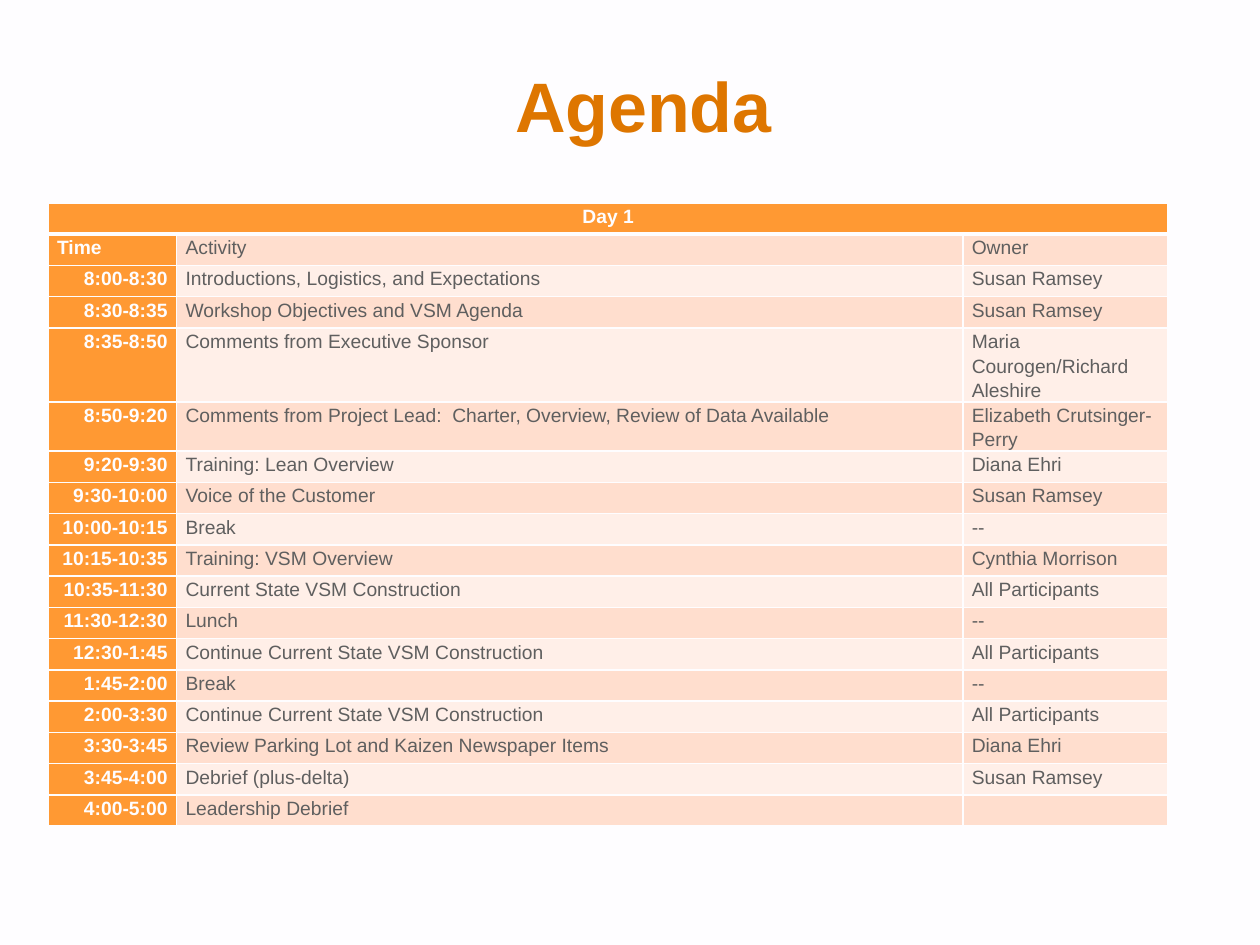
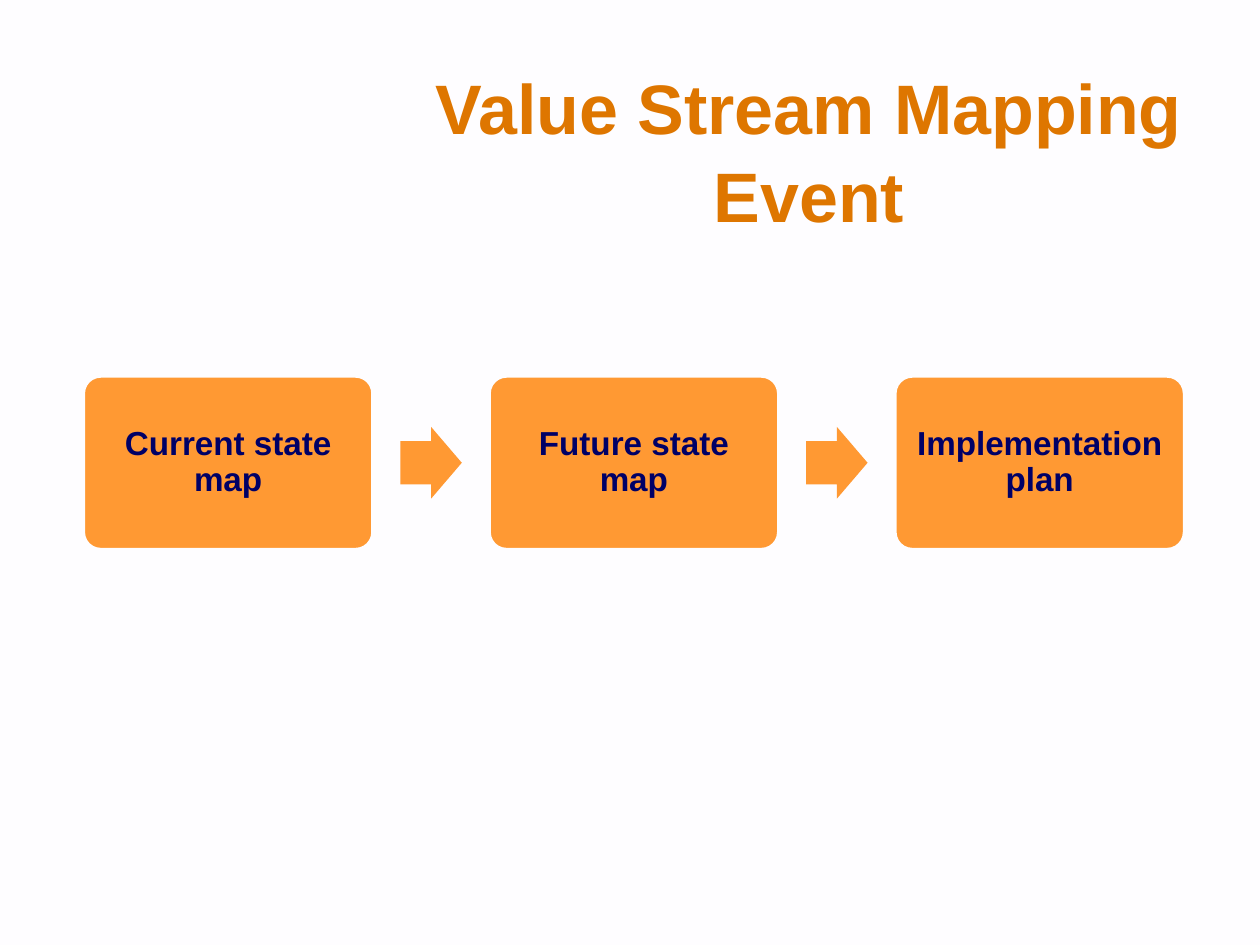
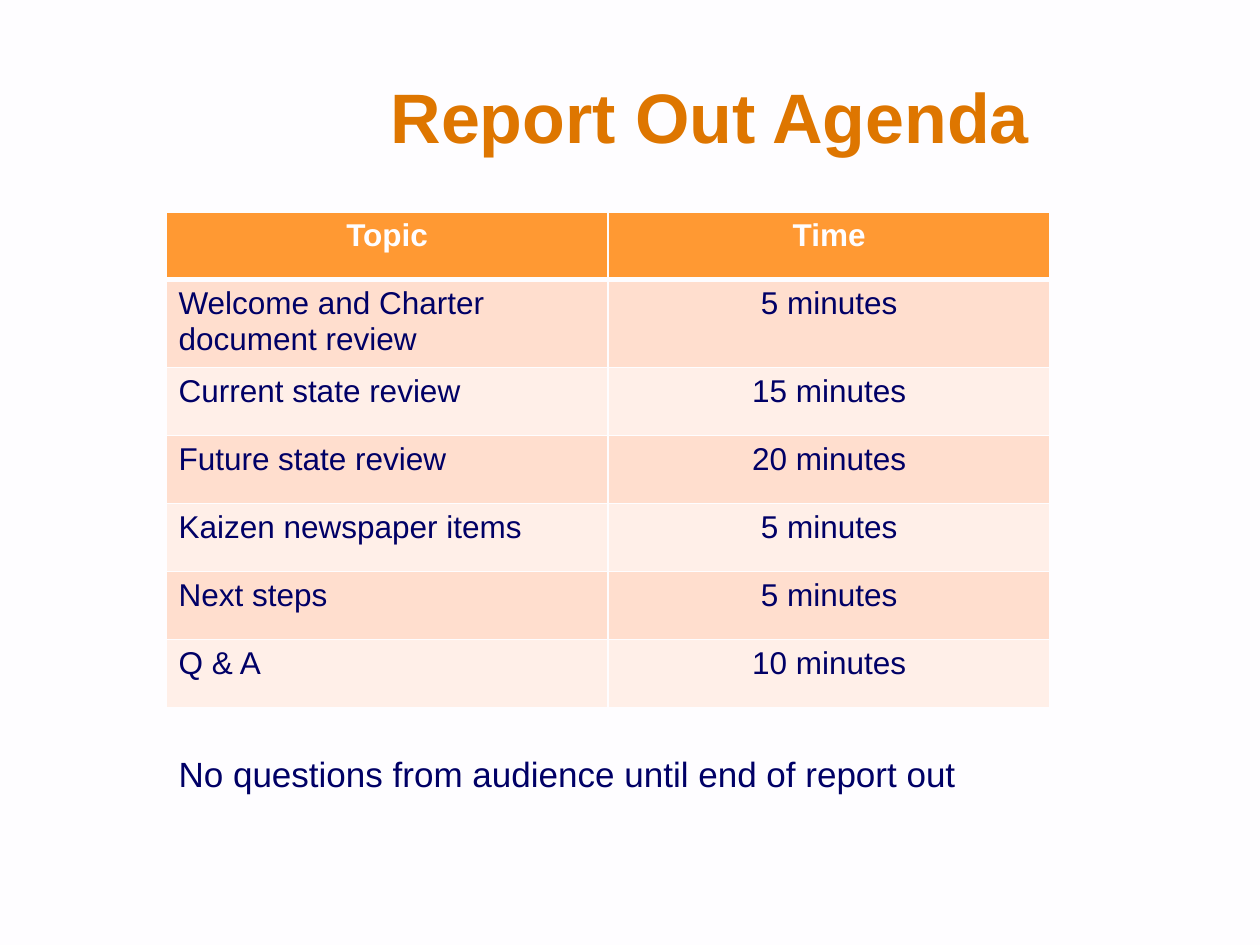
from lxml import etree
from pptx import Presentation
from pptx.dml.color import RGBColor
from pptx.enum.shapes import MSO_SHAPE
from pptx.enum.text import MSO_ANCHOR, MSO_AUTO_SIZE, PP_ALIGN
from pptx.oxml.ns import qn
from pptx.util import Cm, Pt

WHITE = RGBColor(0xFE, 0xFD, 0xFF)
RUST = RGBColor(0xDE, 0x76, 0x00)
ORANGE = RGBColor(0xFF, 0x99, 0x33)
PEACH = RGBColor(0xFF, 0xDE, 0xCE)
PALE = RGBColor(0xFF, 0xEF, 0xE8)
GREY = RGBColor(0x5F, 0x5F, 0x5F)
NAVY = RGBColor(0x00, 0x00, 0x66)
FONT = "Arial"
LEFT, MID, RIGHT = PP_ALIGN.LEFT, PP_ALIGN.CENTER, PP_ALIGN.RIGHT
MIDDLE, BOTTOM = MSO_ANCHOR.MIDDLE, MSO_ANCHOR.BOTTOM
FIXED = MSO_AUTO_SIZE.NONE
ROUND, ARROW = MSO_SHAPE.ROUNDED_RECTANGLE, MSO_SHAPE.RIGHT_ARROW
TITLE_ONLY = 5

DAY = [
    ("Day 1", "", ""),
    ("Time", "Activity", "Owner"),
    ("8:00-8:30", "Introductions, Logistics, and Expectations", "Susan Ramsey"),
    ("8:30-8:35", "Workshop Objectives and VSM Agenda", "Susan Ramsey"),
    ("8:35-8:50", "Comments from Executive Sponsor", "Maria Courogen/Richard Aleshire"),
    ("8:50-9:20", "Comments from Project Lead:  Charter, Overview, Review of Data Available",
     "Elizabeth Crutsinger-Perry"),
    ("9:20-9:30", "Training: Lean Overview", "Diana Ehri"),
    ("9:30-10:00", "Voice of the Customer", "Susan Ramsey"),
    ("10:00-10:15", "Break", "--"),
    ("10:15-10:35", "Training: VSM Overview", "Cynthia Morrison"),
    ("10:35-11:30", "Current State VSM Construction", "All Participants"),
    ("11:30-12:30", "Lunch", "--"),
    ("12:30-1:45", "Continue Current State VSM Construction", "All Participants"),
    ("1:45-2:00", "Break", "--"),
    ("2:00-3:30", "Continue Current State VSM Construction", "All Participants"),
    ("3:30-3:45", "Review Parking Lot and Kaizen Newspaper Items", "Diana Ehri"),
    ("3:45-4:00", "Debrief (plus-delta)", "Susan Ramsey"),
    ("4:00-5:00", "Leadership Debrief", ""),
]
REPORT = [
    ("Topic", "Time"),
    ("Welcome and Charter document review", "5 minutes"),
    ("Current state review", "15 minutes"),
    ("Future state review", "20 minutes"),
    ("Kaizen newspaper items", "5 minutes"),
    ("Next steps", "5 minutes"),
    ("Q & A", "10 minutes"),
]
STEPS = ["Current state map", "Future state map", "Implementation plan"]


def write(frame, text, size, color, bold=False, align=LEFT, space=1.0):
    """Write one styled run into the first paragraph of a frame."""
    para = frame.paragraphs[0]
    para.alignment = align
    para.line_spacing = space
    if not text:
        etree.SubElement(para._p, qn("a:endParaRPr"), sz=str(size * 100))
        return
    run = para.add_run()
    run.text = text
    font = run.font
    font.name, font.size, font.bold = FONT, Pt(size), bold
    font.color.rgb = color


def add_page(deck, text, box, anchor=BOTTOM, align=MID):
    """Add a slide with its title placed in the given box."""
    page = deck.slides.add_slide(deck.slide_layouts[TITLE_ONLY])
    title = page.shapes.title
    title.left, title.top, title.width, title.height = map(Cm, box)
    frame = title.text_frame
    frame.auto_size = FIXED
    frame.word_wrap = True
    frame.vertical_anchor = anchor
    write(frame, text, 40, RUST, True, align, 1.05)
    return page


def edge(cell, head):
    """Draw the cell borders, with a thick bottom under a header."""
    props = cell._tc.get_or_add_tcPr()
    for spot, side in enumerate(("L", "R", "T", "B")):
        width = Pt(3 if head and side == "B" else 1)
        line = etree.Element(qn(f"a:ln{side}"), w=str(width))
        fill = etree.SubElement(line, qn("a:solidFill"))
        etree.SubElement(fill, qn("a:srgbClr"), val=str(WHITE))
        props.insert(spot, line)


def add_grid(page, rows, left, top, cols, highs, inset, style):
    """Add a table whose style gives size, colour, bold, alignment and spacing."""
    frame = page.shapes.add_table(len(rows), len(cols), Cm(left), Cm(top),
                                  Cm(sum(cols)), Cm(sum(highs)))
    table = frame.table
    for col, wide in zip(table.columns, cols):
        col.width = Cm(wide)
    for i, (row, high) in enumerate(zip(rows, highs)):
        table.rows[i].height = Cm(high)
        for j, text in enumerate(row):
            cell = table.cell(i, j)
            size, color, bold, align, space = style(i, j)
            cell.margin_left = cell.margin_right = Cm(inset[0])
            cell.margin_top = cell.margin_bottom = Cm(inset[1])
            cell.fill.solid()
            band = PEACH if i % 2 else PALE
            cell.fill.fore_color.rgb = ORANGE if color == WHITE else band
            edge(cell, i == 0)
            write(cell.text_frame, text, size, color, bold, align, space)
    return table


def day_style(i, j):
    """Style a cell of the day plan."""
    strong = i == 0 or j == 0
    align = MID if i == 0 else RIGHT if j == 0 and i > 1 else LEFT
    return 11, WHITE if strong else GREY, strong, align, 1.15


def report_style(i, j):
    """Style a cell of the report plan."""
    head = i == 0
    return 18, WHITE if head else NAVY, head, MID if head or j else LEFT, 1.0


def add_block(page, kind, box, ratios):
    """Add an orange preset shape without shadow or line."""
    shape = page.shapes.add_shape(kind, *map(Cm, box))
    for k, ratio in enumerate(ratios):
        shape.adjustments[k] = ratio
    shape.shadow.inherit = False
    shape.fill.solid()
    shape.fill.fore_color.rgb = ORANGE
    shape.line.fill.background()
    return shape


def add_flow(page, left, top, wide, high, pitch):
    """Add the row of step boxes with arrows centred between them."""
    tip, tall = 1.24, 1.45
    for i, text in enumerate(STEPS):
        x = left + i * pitch
        step = add_block(page, ROUND, (x, top, wide, high), [0.1])
        step.line.color.rgb = WHITE
        step.line.width = Pt(2)
        frame = step.text_frame
        frame.word_wrap = True
        frame.vertical_anchor = MIDDLE
        frame.margin_left = frame.margin_right = Cm(0.2)
        frame.margin_top = frame.margin_bottom = Cm(0.2)
        write(frame, text, 19, NAVY, True, MID, 0.9)
        if i < len(STEPS) - 1:
            gap = x + wide + (pitch - wide - tip) / 2
            add_block(page, ARROW, (gap, top + (high - tall) / 2, tip, tall), [0.6, 0.5])


def add_note(page, text, box):
    """Add a one-line note."""
    frame = page.shapes.add_textbox(*map(Cm, box)).text_frame
    frame.word_wrap = False
    write(frame, text, 20, NAVY)


def main():
    """Build the deck."""
    deck = Presentation()
    deck.slide_width, deck.slide_height = Cm(25.4), Cm(19.05)
    back = deck.slide_master.background.fill
    back.solid()
    back.fore_color.rgb = WHITE

    page = add_page(deck, "Agenda", (1.83, 1.02, 22.28, 2.11), MIDDLE)
    table = add_grid(page, DAY, 0.97, 4.09, [2.59, 15.85, 4.14],
                     [0.63] * len(DAY), (0.18, 0), day_style)
    table.cell(0, 0).merge(table.cell(0, 2))

    page = add_page(deck, "Value Stream Mapping Event", (7.21, 2.79, 18.19, 2.11))
    add_flow(page, 1.68, 7.58, 5.84, 3.5, 8.18)

    page = add_page(deck, "Report Out Agenda", (7.62, 1.78, 17.17, 1.52), align=LEFT)
    add_grid(page, REPORT, 3.35, 4.27, [8.91, 8.91],
             [1.37, 1.77] + [1.37] * 5, (0.25, 0.13), report_style)
    add_note(page, "No questions from audience until end of report out",
             (3.35, 15.04, 16.28, 1.12))
    deck.save("out.pptx")


if __name__ == "__main__":
    main()
